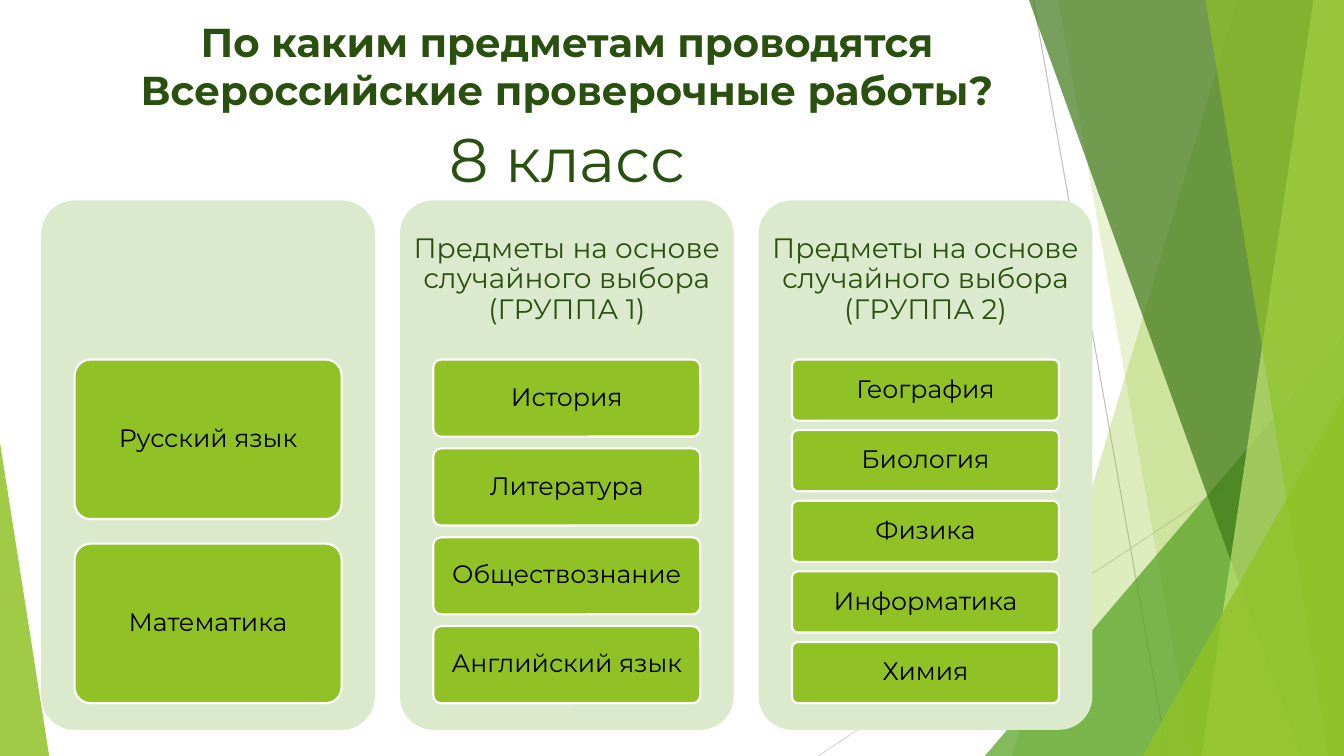
from lxml import etree
from pptx import Presentation
from pptx import util as u
from pptx.dml.color import RGBColor
from pptx.enum import shapes, text
from pptx.oxml.ns import qn

Cm = u.Cm
FONT = "Montserrat"
COLORS = {
    "ink": "2A5010", "black": "000000", "white": "FFFFFF", "panel": "DBE9CD",
    "lime": "90C226", "green": "54A021", "forest": "3F7819", "pale": "C0E474",
    "grey": "BFBFBF", "light grey": "D9D9D9",
}
WIDTH, HEIGHT = 33.87, 19.05

TITLE = "По каким предметам проводятся Всероссийские проверочные работы?"
GRADE = "8 класс"
COLUMNS = [
    ("", ["Русский язык", "Математика"]),
    ("Предметы на основе случайного выбора (ГРУППА 1)",
     ["История", "Литература", "Обществознание", "Английский язык"]),
    ("Предметы на основе случайного выбора (ГРУППА 2)",
     ["География", "Биология", "Физика", "Информатика", "Химия"]),
]

# Lengths below are in centimetres.
HAIRLINES = [
    ((26.04, 0), (29.42, HEIGHT), "grey"),
    ((WIDTH, 10.24), (20.62, HEIGHT), "light grey"),
]
# Bands reach the right edge: (top left x, bottom left x, colour, opacity %)
# Wedges are right triangles: (left, top, width, apex, colour, opacity %)
FACETS = [
    ("band", (31.19, 25.5, "lime", 30)),
    ("band", (26.67, 30.05, "lime", 20)),
    ("wedge", (24.82, 8.46, 9.05, 1, "green", 72)),
    ("band", (25.93, 32.79, "forest", 70)),
    ("band", (33.1, 30.28, "pale", 70)),
    ("band", (30.38, 33.48, "lime", 65)),
    ("wedge", (28.8, 9.98, 5.07, 1, "lime", 80)),
    ("wedge", (0, 11.15, 1.24, 0, "lime", 85)),
]

PANEL_LEFT, PANEL_TOP, PANEL_WIDTH, PANEL_HEIGHT = 1.04, 5.05, 8.41, 13.34
PANEL_STEP = 9.04
HEADER_HEIGHT = 4
CARD_TOP, CARD_WIDTH, CARDS_HEIGHT = 9.06, 6.73, 8.66
GAP_RATIO = 0.154  # gap between cards as a share of card height


def rgb(name):
    return RGBColor.from_string(COLORS[name])


def paint(shape, color, opacity=100):
    shape.shadow.inherit = False
    shape.fill.solid()
    shape.fill.fore_color.rgb = rgb(color)
    shape.line.fill.background()
    if opacity < 100:
        tint = shape.fill._xPr.find(qn("a:solidFill"))[0]
        etree.SubElement(tint, qn("a:alpha"), val=str(opacity * 1000))


def write(shape, words, size, color="ink", bold=False, anchor="TOP",
          inset=(0.25, 0.13), spacing=1):
    frame = shape.text_frame
    frame.word_wrap = True
    frame.vertical_anchor = getattr(text.MSO_ANCHOR, anchor)
    frame.margin_left = frame.margin_right = Cm(inset[0])
    frame.margin_top = frame.margin_bottom = Cm(inset[1])
    para = frame.paragraphs[0]
    para.alignment = text.PP_ALIGN.CENTER
    para.line_spacing = spacing
    span = para.add_run()
    span.text = words
    span.font.name = FONT
    span.font.size = u.Pt(size)
    span.font.bold = bold
    span.font.color.rgb = rgb(color)


def add_box(page, *frame):
    return page.shapes.add_textbox(*map(Cm, frame))


def add_rounded(page, frame, color):
    shape = page.shapes.add_shape(
        shapes.MSO_SHAPE.ROUNDED_RECTANGLE, *map(Cm, frame))
    shape.adjustments[0] = 0.1
    paint(shape, color)
    return shape


def add_hairline(page, start, end, color):
    line = page.shapes.add_connector(
        shapes.MSO_CONNECTOR.STRAIGHT, *map(Cm, start + end))
    line.line.color.rgb = rgb(color)
    line.line.width = u.Pt(0.75)
    etree.SubElement(line._element.spPr, qn("a:effectLst"))


def add_band(page, top_x, bottom_x, color, opacity):
    outline = page.shapes.build_freeform(Cm(top_x), 0)
    corners = [(WIDTH, 0), (WIDTH, HEIGHT), (bottom_x, HEIGHT)]
    outline.add_line_segments([(Cm(x), Cm(y)) for x, y in corners])
    paint(outline.convert_to_shape(), color, opacity)


def add_wedge(page, left, top, width, apex, color, opacity):
    wedge = page.shapes.add_shape(
        shapes.MSO_SHAPE.ISOSCELES_TRIANGLE,
        Cm(left), Cm(top), Cm(width), Cm(HEIGHT - top))
    wedge.adjustments[0] = apex
    paint(wedge, color, opacity)


def add_column(page, left, header, subjects):
    """Draw a panel with its header and evenly spaced subject cards."""
    add_rounded(page, (left, PANEL_TOP, PANEL_WIDTH, PANEL_HEIGHT), "panel")
    if header:
        box = add_box(page, left, PANEL_TOP, PANEL_WIDTH, HEADER_HEIGHT)
        write(box, header, 20, anchor="MIDDLE", inset=(0.2, 0.2), spacing=0.9)
    count = len(subjects)
    height = CARDS_HEIGHT / (count + (count - 1) * GAP_RATIO)
    card_left = left + (PANEL_WIDTH - CARD_WIDTH) / 2
    for row, subject in enumerate(subjects):
        top = CARD_TOP + row * height * (1 + GAP_RATIO)
        card = add_rounded(page, (card_left, top, CARD_WIDTH, height), "lime")
        card.line.color.rgb = rgb("white")
        card.line.width = u.Pt(1.5)
        write(card, subject, 18, "black", anchor="MIDDLE",
              inset=(0.13, 0.1), spacing=0.9)


def main():
    deck = Presentation()
    deck.slide_width, deck.slide_height = Cm(WIDTH), Cm(HEIGHT)
    page = deck.slides.add_slide(deck.slide_layouts[6])
    for hairline in HAIRLINES:
        add_hairline(page, *hairline)
    draw = {"band": add_band, "wedge": add_wedge}
    for kind, facet in FACETS:
        draw[kind](page, *facet)
    write(add_box(page, 1.35, 0.3, 25.88, 2.59), TITLE, 28.8, bold=True)
    write(add_box(page, 8.51, 2.92, 11.58, 2.13), GRADE, 44)
    for index, (header, subjects) in enumerate(COLUMNS):
        add_column(page, PANEL_LEFT + index * PANEL_STEP, header, subjects)
    deck.save("out.pptx")


if __name__ == "__main__":
    main()
